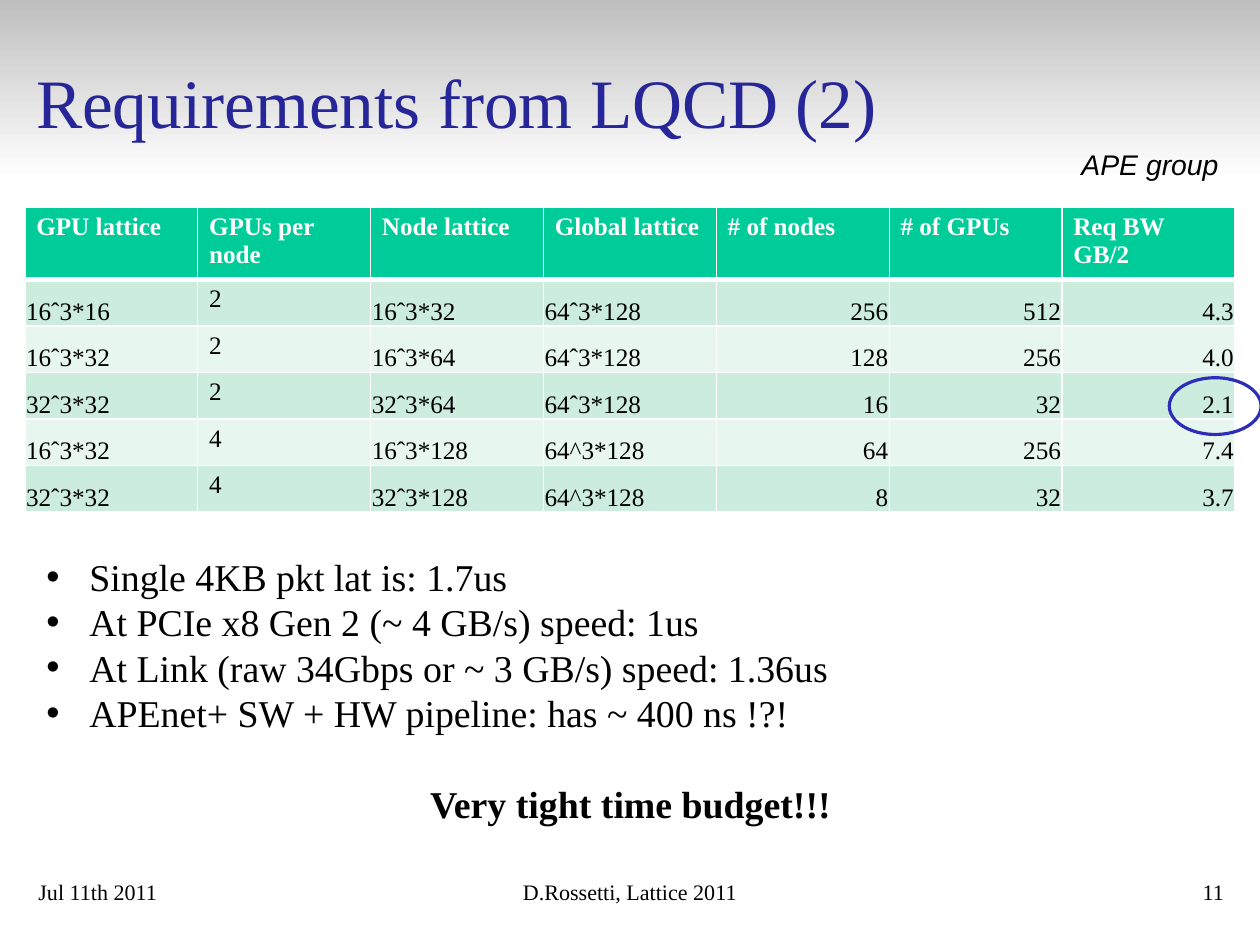
from dataclasses import dataclass
from lxml.etree import SubElement
from pptx import Presentation
from pptx.dml.color import RGBColor
from pptx.enum.shapes import MSO_SHAPE
from pptx.enum.text import MSO_ANCHOR, PP_ALIGN
from pptx.oxml.ns import qn
from pptx.util import Inches, Pt


@dataclass(frozen=True)
class Theme:
    serif: str = "Times New Roman"
    sans: str = "Arial"
    black: str = "000000"
    white: str = "FFFFFF"
    title: str = "262699"
    ring: str = "2D2DB9"
    header: str = "00CC99"
    bands: tuple[str, str] = ("CCECDE", "E7F6EF")
    band_top: str = "BFBFBF"
    title_size: int = 44
    body_size: int = 24
    group_size: int = 18
    table_size: int = 16
    footer_size: int = 14
    body_pitch: float = 28.8


@dataclass(frozen=True)
class Label:
    text: str
    left: float
    top: float
    width: float
    height: float
    size: int
    color: str = Theme.black
    font: str = Theme.serif
    align: PP_ALIGN = PP_ALIGN.LEFT
    anchor: MSO_ANCHOR = MSO_ANCHOR.TOP
    italic: bool = False


T = Theme()
FOOTER = (7.69, 0.56)

LABELS = [
    Label("APE group", 9.39, 1.25, 1.5, 0.38, T.group_size, font=T.sans,
          align=PP_ALIGN.CENTER, italic=True),
    Label("Requirements from LQCD (2)", 0.22, 0.19, 9.08, 1.39, T.title_size,
          T.title, anchor=MSO_ANCHOR.MIDDLE),
    Label("Jul 11th 2011", 0.24, FOOTER[0], 2.32, FOOTER[1], T.footer_size),
    Label("D.Rossetti, Lattice 2011", 2.89, FOOTER[0], 5.33, FOOTER[1],
          T.footer_size, align=PP_ALIGN.CENTER),
    Label("11", 8.57, FOOTER[0], 2.32, FOOTER[1], T.footer_size,
          align=PP_ALIGN.RIGHT),
]

LATTICES = [
    ["GPU lattice", "GPUs per node", "Node lattice", "Global lattice",
     "# of nodes", "# of GPUs", "Req BW\nGB/2"],
    ["16ˆ3*16", "2", "16ˆ3*32", "64ˆ3*128", "256", "512", "4.3"],
    ["16ˆ3*32", "2", "16ˆ3*64", "64ˆ3*128", "128", "256", "4.0"],
    ["32ˆ3*32", "2", "32ˆ3*64", "64ˆ3*128", "16", "32", "2.1"],
    ["16ˆ3*32", "4", "16ˆ3*128", "64^3*128", "64", "256", "7.4"],
    ["32ˆ3*32", "4", "32ˆ3*128", "64^3*128", "8", "32", "3.7"],
]
GPUS_PER_NODE, FIRST_COUNT = 1, 4

BULLETS = [
    "Single 4KB pkt lat is: 1.7us",
    "At PCIe x8 Gen 2 (~ 4 GB/s) speed: 1us",
    "At Link (raw 34Gbps or ~ 3 GB/s) speed: 1.36us",
    "APEnet+ SW + HW pipeline: has ~ 400 ns !?!",
]
CONCLUSION = "Very tight time budget!!!"


def rgb(color: str) -> RGBColor:
    return RGBColor.from_string(color)


def write(p, text: str, size: int, color: str = T.black, font: str = T.serif,
          bold: bool = False, italic: bool = False) -> None:
    p.text = text
    for r in p.runs:
        r.font.size, r.font.name = Pt(size), font
        r.font.bold, r.font.italic = bold, italic
        r.font.color.rgb = rgb(color)


def add_text_frame(s, left: float, top: float, width: float, height: float):
    tf = s.shapes.add_textbox(Inches(left), Inches(top),
                              Inches(width), Inches(height)).text_frame
    tf.word_wrap = True
    return tf


def add_label(s, label: Label) -> None:
    tf = add_text_frame(s, label.left, label.top, label.width, label.height)
    tf.vertical_anchor = label.anchor
    p = tf.paragraphs[0]
    p.alignment = label.align
    write(p, label.text, label.size, label.color, label.font,
          italic=label.italic)


def add_title_band(s) -> None:
    sp = s.shapes.add_shape(MSO_SHAPE.RECTANGLE, 0, 0,
                            Inches(11.11), Inches(1.58))
    sp.shadow.inherit = False
    sp.line.fill.background()
    sp.fill.gradient()
    sp.fill.gradient_angle = 270
    for stop, color in zip(sp.fill.gradient_stops, (T.band_top, T.white)):
        stop.color.rgb = rgb(color)


def set_borders(cell, top: int, bottom: int) -> None:
    tc_pr = cell._tc.get_or_add_tcPr()
    for side, width in (("L", 1), ("R", 1), ("T", top), ("B", bottom)):
        ln = SubElement(tc_pr, qn(f"a:ln{side}"), w=str(Pt(width)))
        fill = SubElement(ln, qn("a:solidFill"))
        SubElement(fill, qn("a:srgbClr"), val=T.white)


def format_cell(cell, text: str, row: int, col: int) -> None:
    is_header = row == 0
    set_borders(cell, 3 if row == 1 else 1, 3 if is_header else 1)
    cell.fill.solid()
    cell.fill.fore_color.rgb = rgb(
        T.header if is_header else T.bands[(row - 1) % 2])
    p = cell.text_frame.paragraphs[0]
    write(p, text, T.table_size, T.white if is_header else T.black,
          bold=is_header)
    if not is_header and col != GPUS_PER_NODE:
        cell.vertical_anchor = MSO_ANCHOR.BOTTOM
        cell.margin_left = cell.margin_right = cell.margin_top = Inches(0.01)
        cell.margin_bottom = 0
        if col >= FIRST_COUNT:
            p.alignment = PP_ALIGN.RIGHT


def add_lattice_table(s) -> None:
    n_rows, n_cols = len(LATTICES), len(LATTICES[0])
    table = s.shapes.add_table(n_rows, n_cols, Inches(0.22), Inches(1.83),
                               Inches(10.67), Inches(2.62)).table
    for column in table.columns:
        column.width = Inches(10.67 / n_cols)
    for row, texts in enumerate(LATTICES):
        table.rows[row].height = Inches(0.41 if row else 0.58)
        for col, text in enumerate(texts):
            format_cell(table.cell(row, col), text, row, col)


def add_ring(s) -> None:
    sp = s.shapes.add_shape(MSO_SHAPE.OVAL, Inches(10.31), Inches(3.33),
                            Inches(0.81), Inches(0.5))
    sp.shadow.inherit = False
    sp.fill.background()
    sp.line.color.rgb = rgb(T.ring)
    sp.line.width = Pt(2)


def add_findings(s) -> None:
    tf = add_text_frame(s, 0.31, 4.83, 10.5, 2.93)
    for i, text in enumerate(BULLETS):
        p = tf.paragraphs[0] if i == 0 else tf.add_paragraph()
        p.line_spacing = Pt(T.body_pitch)
        p_pr = p._p.get_or_add_pPr()
        p_pr.set("marL", str(Inches(0.38)))
        p_pr.set("indent", str(-Inches(0.38)))
        SubElement(p_pr, qn("a:buFont"), typeface=T.sans)
        SubElement(p_pr, qn("a:buChar"), char="•")
        write(p, text, T.body_size)
    p = tf.add_paragraph()
    p.alignment = PP_ALIGN.CENTER
    p.line_spacing = p.space_before = Pt(T.body_pitch)
    write(p, CONCLUSION, T.body_size, bold=True)


def main() -> None:
    prs = Presentation()
    prs.slide_width, prs.slide_height = Inches(11.11), Inches(8.33)
    s = prs.slides.add_slide(prs.slide_layouts[6])

    # Heading band, title, group name and footer
    add_title_band(s)
    for label in LABELS:
        add_label(s, label)

    # Lattice sizes, with the key bandwidth ringed
    add_lattice_table(s)
    add_ring(s)

    # Latency findings
    add_findings(s)
    prs.save("out.pptx")


if __name__ == "__main__":
    main()
